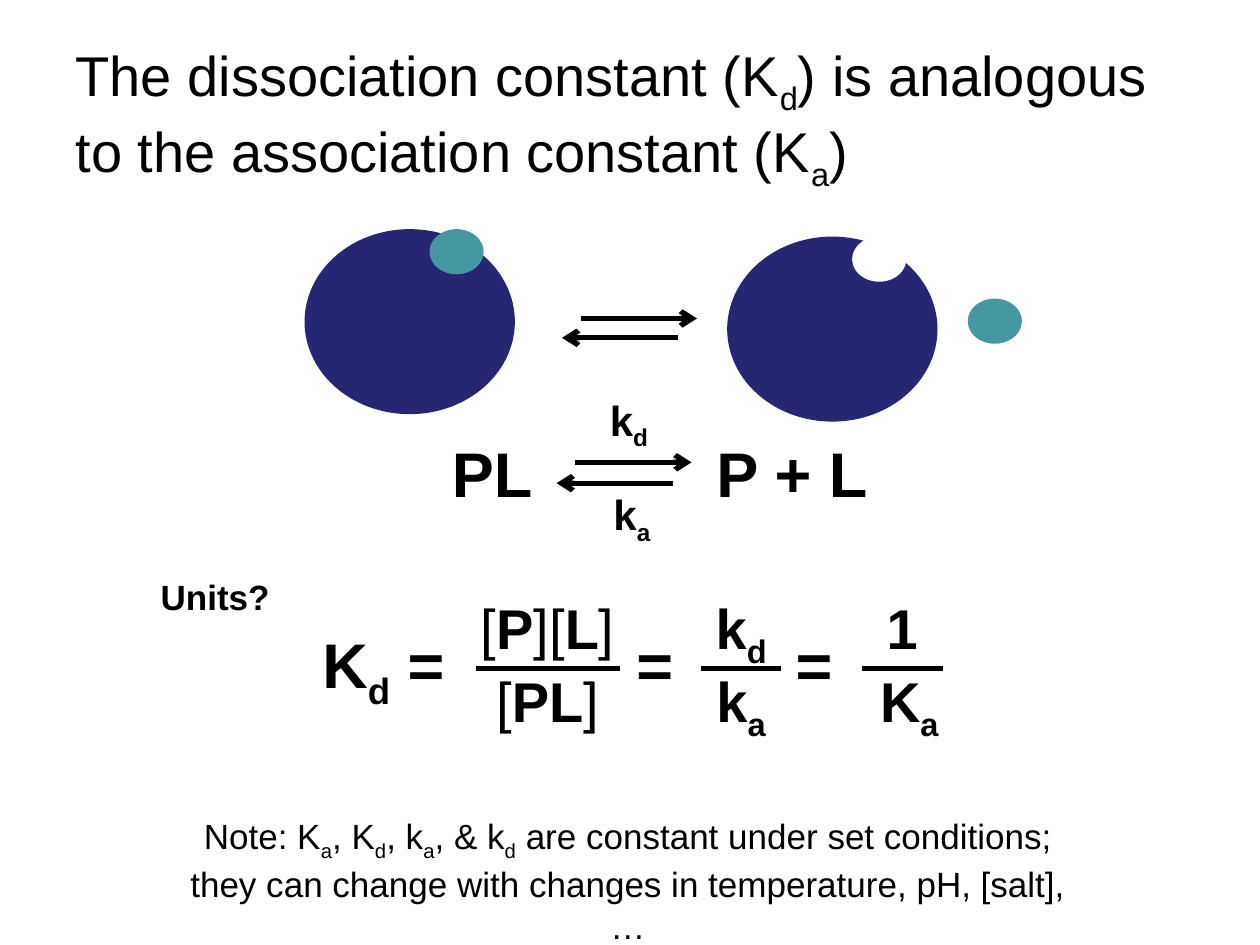
from lxml.etree import SubElement
from pptx import Presentation
from pptx.dml.color import RGBColor
from pptx.enum.shapes import MSO_CONNECTOR, MSO_SHAPE
from pptx.enum.text import MSO_ANCHOR, MSO_AUTO_SIZE, PP_ALIGN
from pptx.oxml.ns import qn
from pptx.util import Cm, Pt

BLACK = RGBColor(0x00, 0x00, 0x00)
WHITE = RGBColor(0xFF, 0xFF, 0xFF)
NAVY = RGBColor(0x26, 0x26, 0x73)
TEAL = RGBColor(0x45, 0x97, 0xA0)
BOLD_MARK = "*"
SUBSCRIPT_MARK = "_"


def write_text(paragraph, text, size, bold=False, align=PP_ALIGN.LEFT):
    paragraph.alignment = align
    for index, segment in enumerate(text.split(BOLD_MARK)):
        first, *others = segment.split(SUBSCRIPT_MARK)
        pieces = [(first, False)]
        for other in others:
            pieces += [(other[0], True), (other[1:], False)]
        for piece, subscript in pieces:
            if not piece:
                continue
            run = paragraph.add_run()
            run.text = piece
            run.font.name = "Arial"
            run.font.size = Pt(size)
            run.font.bold = bold or index % 2 == 1
            run.font.color.rgb = BLACK
            if subscript:
                run.font._element.set("baseline", "-25000")


class SlideBuilder:
    protein_size = (4.24, 3.73)
    ligand_size = (1.09, 0.91)
    arrow_length = 2.34
    arrow_shift = 0.38
    line_width = 3

    def __init__(self, slide):
        self.slide = slide

    def title(self, text, left, top, width, height):
        shape = self.slide.shapes.title
        shape.left, shape.top = Cm(left), Cm(top)
        shape.width, shape.height = Cm(width), Cm(height)
        shape.text_frame.auto_size = MSO_AUTO_SIZE.NONE
        shape.text_frame.vertical_anchor = MSO_ANCHOR.MIDDLE
        write_text(shape.text_frame.paragraphs[0], text, 32)

    def text(self, text, left, top, width, height, wrap=False, **style):
        shape = self.slide.shapes.add_textbox(Cm(left), Cm(top), Cm(width), Cm(height))
        shape.text_frame.word_wrap = wrap
        write_text(shape.text_frame.paragraphs[0], text, **style)

    def ellipse(self, left, top, size, color):
        width, height = size
        shape = self.slide.shapes.add_shape(
            MSO_SHAPE.OVAL, Cm(left), Cm(top), Cm(width), Cm(height))
        shape.shadow.inherit = False
        shape.fill.solid()
        shape.fill.fore_color.rgb = color
        shape.line.fill.background()

    def protein(self, left, top, site_color):
        self.ellipse(left, top, self.protein_size, NAVY)
        self.ellipse(left + 2.52, top, self.ligand_size, site_color)

    def line(self, start, end, y, arrow=False):
        connector = self.slide.shapes.add_connector(
            MSO_CONNECTOR.STRAIGHT, Cm(start), Cm(y), Cm(end), Cm(y))
        connector.line.color.rgb = BLACK
        connector.line.width = Pt(self.line_width)
        if arrow:
            SubElement(connector.line._get_or_add_ln(), qn("a:tailEnd"), type="arrow")
        SubElement(connector._element.spPr, qn("a:effectLst"))

    def equilibrium(self, left, top, gap):
        forward = left + self.arrow_shift
        self.line(forward, forward + self.arrow_length, top, arrow=True)
        self.line(left + self.arrow_length, left, top + gap, arrow=True)

    def fraction(self, bar_left, bar_right, *terms):
        for top, (text, center, width, bold) in zip((11.84, 13.32), terms):
            self.text(text, center - width / 2, top, width, 1.63,
                      size=32, bold=bold, align=PP_ALIGN.CENTER)
        self.line(bar_left, bar_right, 13.47)


def main():
    presentation = Presentation()
    presentation.slide_width, presentation.slide_height = Cm(25.4), Cm(19.05)
    slide = presentation.slides.add_slide(presentation.slide_layouts[5])
    builder = SlideBuilder(slide)

    builder.title("The dissociation constant (K_d) is analogous to the association constant (K_a)",
                  1.27, 0.76, 22.86, 3.18)

    builder.protein(6.14, 4.62, TEAL)
    builder.equilibrium(11.33, 6.42, 0.39)
    builder.protein(14.66, 4.77, WHITE)
    builder.ellipse(19.51, 6.02, builder.ligand_size, TEAL)

    builder.text("PL", 8.86, 8.64, 2.16, 1.8, size=36, bold=True)
    builder.equilibrium(11.22, 9.32, 0.42)
    builder.text("P + L", 14.19, 8.64, 3.58, 1.8, size=36, bold=True)
    for label, left, top in (("k_d", 12.02, 7.82), ("k_a", 12.08, 9.73)):
        builder.text(label, left, top, 1.32, 1.27,
                     size=24, bold=True, align=PP_ALIGN.CENTER)

    builder.text("Units?", 2.99, 11.48, 2.72, 1.12, size=20, bold=True)
    for text, left, width in (("K_d =", 6.25, 3.1), ("=", 12.58, 1.26), ("=", 15.79, 1.26)):
        builder.text(text, left, 12.48, width, 1.8, size=36, bold=True)
    builder.fraction(9.59, 12.5,
                     ("[*P*][*L*]", 11.04, 3.23, False), ("[*PL*]", 11.04, 2.59, False))
    builder.fraction(14.14, 15.75, ("k_d", 14.94, 1.6, True), ("k_a", 14.94, 1.57, True))
    builder.fraction(17.37, 19, ("1", 18.19, 1.14, True), ("K_a", 18.33, 1.75, True))

    builder.text("Note: K_a, K_d, k_a, & k_d are constant under set conditions; "
                 "they can change with changes in temperature, pH, [salt], …",
                 3.15, 16.3, 19.02, 1.96, wrap=True, size=20, align=PP_ALIGN.CENTER)

    presentation.save("out.pptx")


if __name__ == "__main__":
    main()
